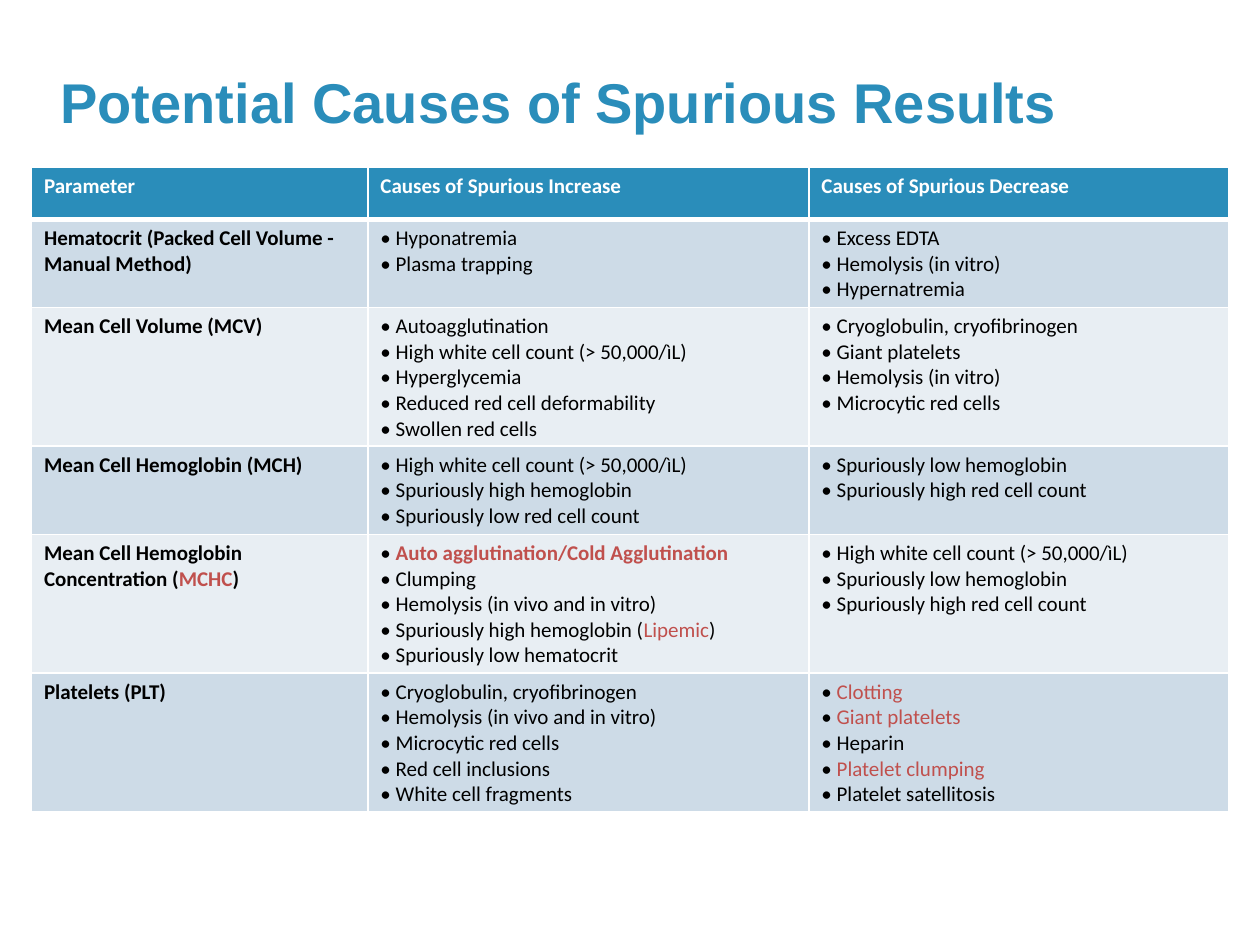
from dataclasses import dataclass

from lxml.etree import SubElement
from pptx import Presentation
from pptx.dml.color import RGBColor
from pptx.enum.text import MSO_ANCHOR
from pptx.oxml.ns import qn
from pptx.util import Inches, Pt


@dataclass(frozen=True)
class Theme:
    blue: RGBColor = RGBColor(0x2A, 0x8D, 0xBA)
    red: RGBColor = RGBColor(0xC0, 0x50, 0x4D)
    black: RGBColor = RGBColor(0, 0, 0)
    white: RGBColor = RGBColor(255, 255, 255)
    bands: tuple = (RGBColor(0xE8, 0xEE, 0xF3), RGBColor(0xCD, 0xDB, 0xE7))
    title_size: Pt = Pt(32)
    table_size: Pt = Pt(12)


theme = Theme()


def style_font(font, name, size, color, bold):
    font.name = name
    font.size = size
    font.color.rgb = color
    font.bold = bold


def add_border(cell, side, width):
    line = SubElement(cell._tc.get_or_add_tcPr(), qn(f"a:ln{side}"), w=str(Pt(width)))
    fill = SubElement(line, qn("a:solidFill"))
    SubElement(fill, qn("a:srgbClr"), val=str(theme.white))


STRONG_CAUSE = "Auto agglutination/Cold Agglutination"

# "|" encloses highlighted words
rows = [
    (["Parameter"], ["Causes of Spurious Increase"], ["Causes of Spurious Decrease"]),
    (
        ["Hematocrit (Packed Cell Volume - Manual Method)"],
        ["Hyponatremia", "Plasma trapping"],
        ["Excess EDTA", "Hemolysis (in vitro)", "Hypernatremia"],
    ),
    (
        ["Mean Cell Volume (MCV)"],
        ["Autoagglutination", "High white cell count (> 50,000/ìL)", "Hyperglycemia",
         "Reduced red cell deformability", "Swollen red cells"],
        ["Cryoglobulin, cryofibrinogen", "Giant platelets", "Hemolysis (in vitro)",
         "Microcytic red cells"],
    ),
    (
        ["Mean Cell Hemoglobin (MCH)"],
        ["High white cell count (> 50,000/ìL)", "Spuriously high hemoglobin",
         "Spuriously low red cell count"],
        ["Spuriously low hemoglobin", "Spuriously high red cell count"],
    ),
    (
        ["Mean Cell Hemoglobin", "Concentration (|MCHC|)"],
        [f"|{STRONG_CAUSE}|", "Clumping", "Hemolysis (in vivo and in vitro)",
         "Spuriously high hemoglobin (|Lipemic|)", "Spuriously low hematocrit"],
        ["High white cell count (> 50,000/ìL)", "Spuriously low hemoglobin",
         "Spuriously high red cell count"],
    ),
    (
        ["Platelets (PLT)"],
        ["Cryoglobulin, cryofibrinogen", "Hemolysis (in vivo and in vitro)",
         "Microcytic red cells", "Red cell inclusions", "White cell fragments"],
        ["|Clotting|", "|Giant platelets|", "Heparin", "|Platelet clumping|",
         "Platelet satellitosis"],
    ),
]

deck = Presentation()
deck.slide_width = Inches(10)
deck.slide_height = Inches(7.5)
page = deck.slides.add_slide(deck.slide_layouts[6])

title_box = page.shapes.add_textbox(Inches(0.48), Inches(0.07), Inches(9.02), Inches(1.01))
title = title_box.text_frame
title.word_wrap = True
title.vertical_anchor = MSO_ANCHOR.BOTTOM
title.margin_left = title.margin_right = title.margin_top = title.margin_bottom = 0
para = title.paragraphs[0]
para.text = "Potential Causes of Spurious Results"
para.line_spacing = 0.9
style_font(para.font, "Arial", theme.title_size, theme.blue, True)

row_height = Inches(0.41)
table = page.shapes.add_table(
    len(rows), 3, Inches(0.25), Inches(1.33), Inches(9.5), row_height * len(rows)
).table
table.horz_banding = False
for column, width in zip(table.columns, (2.67, 3.5, 3.33)):
    column.width = Inches(width)

for row_index, row in enumerate(rows):
    table.rows[row_index].height = row_height
    is_header = row_index == 0
    for column_index, lines in enumerate(row):
        cell = table.cell(row_index, column_index)
        add_border(cell, "L", 1)
        add_border(cell, "R", 1)
        add_border(cell, "T", 3 if row_index == 1 else 1)
        add_border(cell, "B", 3 if is_header else 1)
        cell.fill.solid()
        cell.fill.fore_color.rgb = theme.blue if is_header else theme.bands[row_index % 2]

        is_cause = not is_header and column_index > 0
        color = theme.white if is_header else theme.black
        for line_index, line in enumerate(lines):
            frame = cell.text_frame
            para = frame.add_paragraph() if line_index else frame.paragraphs[0]
            style_font(para.font, "Calibri", theme.table_size, color, not is_cause)
            marked_line = f"• {line}" if is_cause else line
            for part_index, part in enumerate(marked_line.split("|")):
                if not part:
                    continue
                span = para.add_run()
                span.text = part
                if part_index % 2:
                    span.font.color.rgb = theme.red
                if part == STRONG_CAUSE:
                    span.font.bold = True

deck.save("out.pptx")
